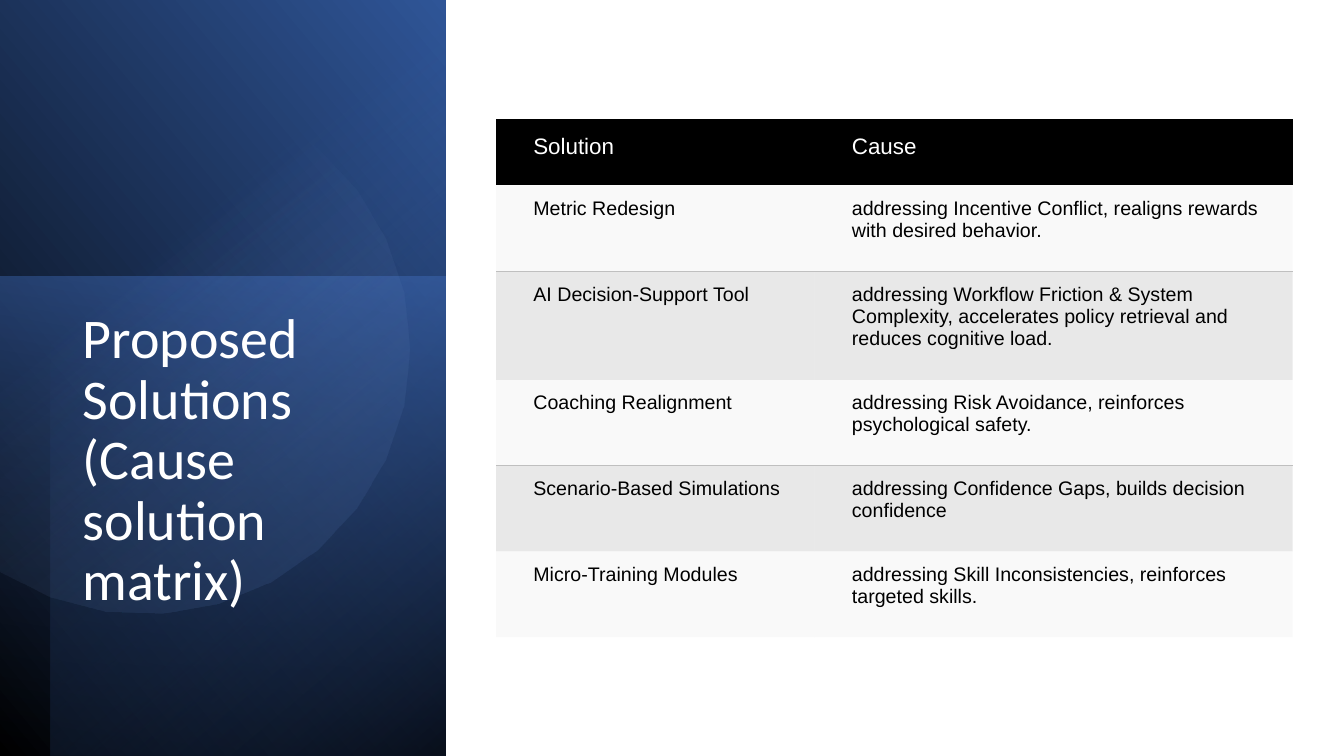
from math import cos, sin, radians
from pptx import Presentation
from pptx.dml.color import RGBColor
from pptx.enum.shapes import MSO_SHAPE as SHAPE
from pptx.enum.text import MSO_ANCHOR as ANCHOR, MSO_AUTO_SIZE as AUTOSIZE, PP_ALIGN as ALIGN
from pptx.oxml import parse_xml
from pptx.oxml.ns import nsdecls, qn
from pptx.util import Inches, Pt
from lxml import etree

BLACK = RGBColor(0x00, 0x00, 0x00)
WHITE = RGBColor(0xFF, 0xFF, 0xFF)
NAVY = RGBColor(0x20, 0x38, 0x64)
DEEP_BLUE = RGBColor(0x2F, 0x55, 0x97)
BLUE = RGBColor(0x44, 0x72, 0xC4)
PALE_BLUE = RGBColor(0x8F, 0xAA, 0xDC)
LIGHT = RGBColor(0xF2, 0xF2, 0xF2)
GREY = RGBColor(0xBF, 0xBF, 0xBF)


def set_alphas(element, alphas):
    """Give each colour in element its opacity in percent."""
    for clr, alpha in zip(list(element.iter(qn("a:srgbClr"))), alphas):
        if alpha < 100:
            etree.SubElement(clr, qn("a:alpha")).set("val", str(alpha * 1000))


def style_gradient(sp, rotation, angle, stops):
    """Rotate a shape and fill it with (position, colour, opacity) stops."""
    sp.rotation = rotation
    sp.shadow.inherit = False
    sp.line.fill.background()
    sp.fill.gradient()
    sp.fill.gradient_angle = angle
    for stop, (position, color, alpha) in zip(sp.fill.gradient_stops, stops):
        stop.position = position
        stop.color.rgb = color
    set_alphas(sp._element.spPr, [alpha for _, _, alpha in stops])


prs = Presentation()
prs.slide_width, prs.slide_height = Inches(13.33), Inches(7.5)
s = prs.slides.add_slide(prs.slide_layouts[5])

# Layered gradients of the left panel: frame, rotation, flip, angle, stops
panel_layers = [
    ((-1.55, 1.55, 7.52, 4.42), 90, True, 50, [(0, BLACK, 100), (1, DEEP_BLUE, 100)]),
    ((-0.17, 2.91, 4.76, 4.42), 270, False, 170, [(0, BLUE, 50), (1, NAVY, 0)]),
    ((-1.29, 1.79, 7.5, 3.92), 270, True, 140, [(0, BLACK, 59), (0.69, BLUE, 0)]),
]
for frame, rotation, flipped, angle, stops in panel_layers:
    sp = s.shapes.add_shape(SHAPE.RECTANGLE, *[Inches(v) for v in frame])
    style_gradient(sp, rotation, angle, stops)
    if flipped:
        sp._element.spPr.find(qn("a:xfrm")).set("flipH", "1")

# Translucent disc, cut off at the slide's left edge
TILT, RADIUS, CX, CY = 101.6, 2.63, 1.81, 3.94
HALF_ARC, SEGMENTS = 123, 20
arc = []
for i in range(SEGMENTS + 1):
    a = radians(HALF_ARC * (2 * i / SEGMENTS - 1) - TILT)
    arc.append((Inches(CX + RADIUS * cos(a)), Inches(CY + RADIUS * sin(a))))
builder = s.shapes.build_freeform(*arc[0])
builder.add_line_segments(arc[1:], close=True)
disc = builder.convert_to_shape()
style_gradient(disc, TILT, 50, [(0.39, PALE_BLUE, 0), (1, DEEP_BLUE, 26)])

# Title, brought in front of the panel
title = s.shapes.title
s.shapes._spTree.append(title._element)
title.left, title.top, title.width, title.height = [Inches(v) for v in (0.72, 3.03, 3.15, 3.36)]
tf = title.text_frame
tf.word_wrap = True
tf.auto_size = AUTOSIZE.NONE
tf.vertical_anchor = ANCHOR.TOP
p = tf.paragraphs[0]
p.alignment = ALIGN.LEFT
p.line_spacing = 0.9
r = p.add_run()
r.text = "Proposed Solutions (Cause solution matrix)"
r.font.name, r.font.size, r.font.color.rgb = "Calibri", Pt(40), WHITE

# Solution and cause table
rows = [
    ("Solution", "Cause"),
    ("Metric Redesign", "addressing Incentive Conflict, realigns rewards with desired behavior."),
    ("AI Decision-Support Tool", "addressing Workflow Friction & System Complexity, "
     "accelerates policy retrieval and reduces cognitive load."),
    ("Coaching Realignment", "addressing Risk Avoidance, reinforces psychological safety."),
    ("Scenario-Based Simulations", "addressing Confidence Gaps, builds decision confidence"),
    ("Micro-Training Modules", "addressing Skill Inconsistencies, reinforces targeted skills."),
]
row_heights = [0.66, 0.85, 1.08, 0.85, 0.85, 0.85]
table = s.shapes.add_table(len(rows), 2, Inches(4.92), Inches(1.18),
                           Inches(7.9), Inches(sum(row_heights))).table
table.horz_banding = False
table._tbl.tblPr.find(qn("a:tableStyleId")).text = "{2D5ABB26-0587-4C30-8999-92F81FD0307C}"
for col, share in zip(table.columns, (0.4, 0.6)):
    col.width = Inches(7.9 * share)

for i, (texts, height) in enumerate(zip(rows, row_heights)):
    table.rows[i].height = Inches(height)
    header = i == 0
    if header:
        fill, alpha, ruled = BLACK, 100, None
    elif i % 2:
        fill, alpha, ruled = LIGHT, 45, "lnB" if i < len(rows) - 1 else None
    else:
        fill, alpha, ruled = GREY, 35, "lnT"
    for cell, text in zip(table.rows[i].cells, texts):
        cell.margin_left, cell.margin_top = Inches(0.37), Inches(0.12)
        cell.margin_right = cell.margin_bottom = Inches(0.22)
        cell.vertical_anchor = ANCHOR.MIDDLE if header else ANCHOR.TOP
        cell.fill.solid()
        cell.fill.fore_color.rgb = fill
        tcPr = cell._tc.tcPr
        set_alphas(tcPr, [alpha])
        # Only the edge between a light row and the grey row below it is ruled
        for n, edge in enumerate(("lnL", "lnR", "lnT", "lnB")):
            paint = "<a:noFill/>"
            if edge == ruled:
                paint = f'<a:solidFill><a:srgbClr val="{GREY}"/></a:solidFill>'
            tcPr.insert(n, parse_xml(
                f'<a:{edge} {nsdecls("a")} w="12700">{paint}</a:{edge}>'))
        r = cell.text_frame.paragraphs[0].add_run()
        r.text = text
        r.font.name, r.font.size = "Arial", Pt(16 if header else 14)
        r.font.color.rgb = WHITE if header else BLACK

prs.save("out.pptx")
